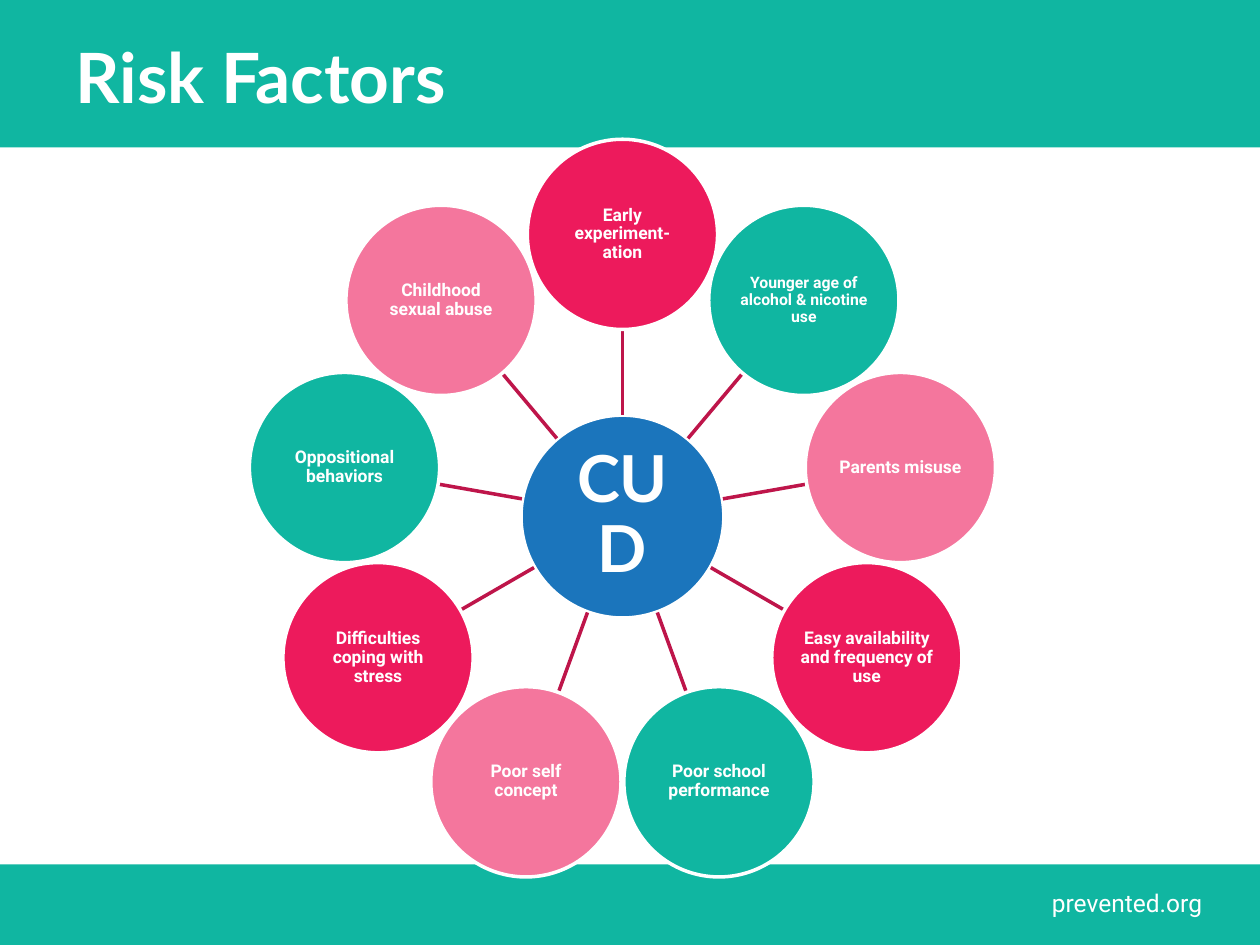
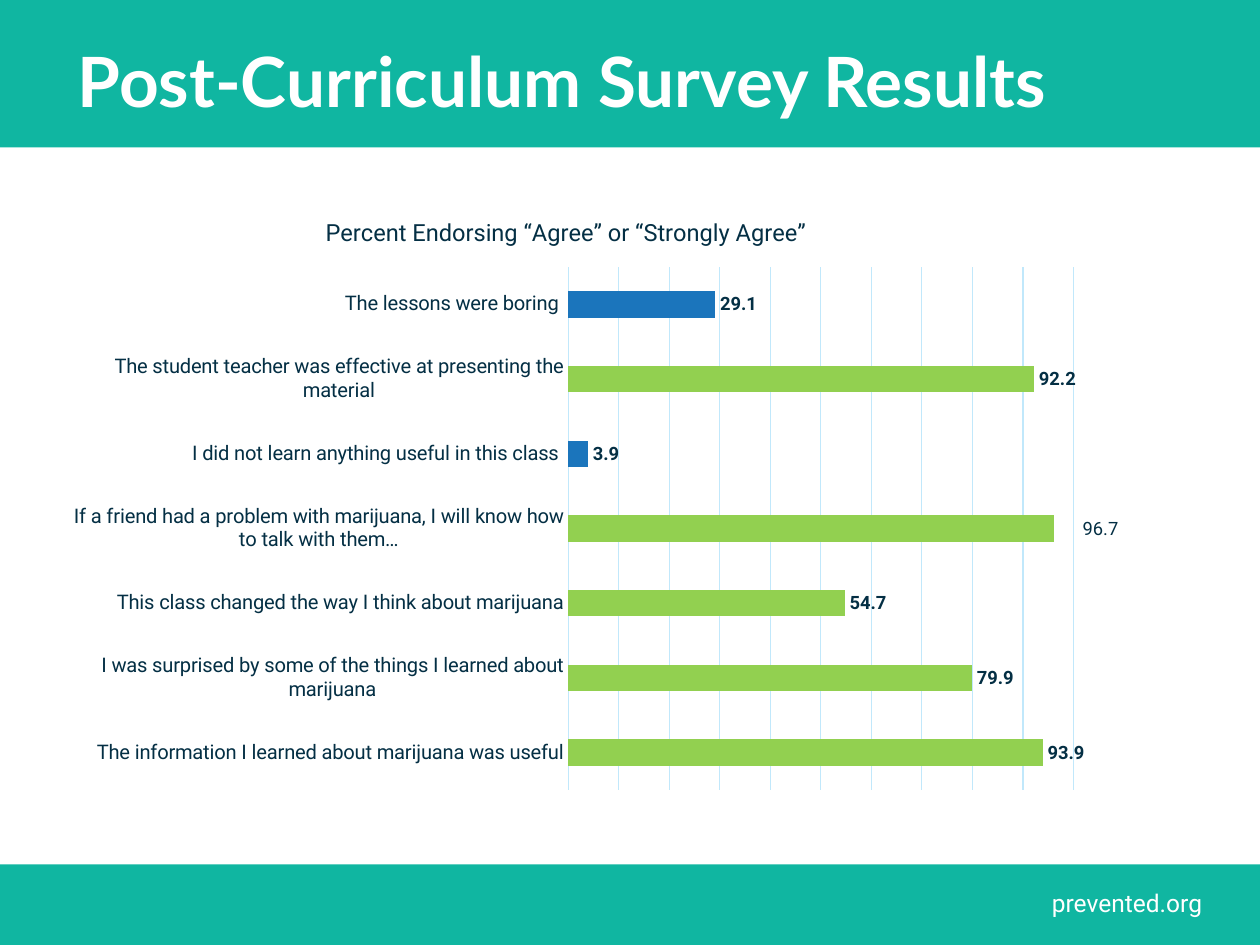
from math import cos, radians, sin

from lxml.etree import SubElement
from pptx import Presentation
from pptx.chart.data import CategoryChartData
from pptx.dml.color import RGBColor
from pptx.enum.chart import XL_CHART_TYPE as ChartType
from pptx.enum.chart import XL_LABEL_POSITION as LabelPos
from pptx.enum.chart import XL_TICK_LABEL_POSITION as TickLabelPos
from pptx.enum.chart import XL_TICK_MARK as TickMark
from pptx.enum.shapes import MSO_CONNECTOR as Connector
from pptx.enum.shapes import MSO_SHAPE as Shape
from pptx.enum.text import MSO_ANCHOR as Anchor
from pptx.enum.text import PP_ALIGN as Align
from pptx.oxml.ns import qn
from pptx.util import Inches, Pt

# Shared look
TEAL = RGBColor(0x10, 0xB6, 0xA1)
RED = RGBColor(0xED, 0x1A, 0x5C)
PINK = RGBColor(0xF4, 0x76, 0x9D)
CRIMSON = RGBColor(0xBE, 0x15, 0x4A)
BLUE = RGBColor(0x1B, 0x75, 0xBC)
GREEN = RGBColor(0x92, 0xD0, 0x50)
NAVY = RGBColor(0x04, 0x2F, 0x44)
PALE_BLUE = RGBColor(0xC1, 0xE8, 0xFB)
WHITE = RGBColor(0xFF, 0xFF, 0xFF)
HEAD_FONT, BODY_FONT = "Lato", "Roboto"

# Wheel of risk factors, clockwise from the top
HUB_X, HUB_Y = 4.94, 4.1
HUB_SIZE, FACTOR_SIZE = 1.61, 1.51
RING, SPOKE_START, SPOKE_END = 2.24, 0.81, 1.48
FACTORS = [
    ("Early experiment-ation", 10),
    ("Younger age of alcohol & nicotine use", 9),
    ("Parents misuse", 10),
    ("Easy availability and frequency of use", 10),
    ("Poor school performance", 10),
    ("Poor self concept", 10),
    ("Difficulties coping with stress", 10),
    ("Oppositional behaviors", 10),
    ("Childhood sexual abuse", 10),
]

# Survey statements, from the bottom bar to the top one
CHART_W, CHART_H = 8.43, 4.88
SURVEY = [
    ("The information I learned about marijuana was useful", 93.9, GREEN),
    ("I was surprised by some of the things I learned about marijuana", 79.9, GREEN),
    ("This class changed the way I think about marijuana", 54.7, GREEN),
    ("If a friend had a problem with marijuana, I will know how to talk with them…",
     96.1, GREEN),
    ("I did not learn anything useful in this class ", 3.9, BLUE),
    ("The student teacher was effective at presenting the material", 92.2, GREEN),
    ("The lessons were boring ", 29.1, BLUE),
]


def set_font(font, size, color, name=BODY_FONT, bold=False):
    font.size, font.name, font.bold = Pt(size), name, bold
    font.color.rgb = color


def write(tf, text, size, color=WHITE, name=BODY_FONT, bold=False,
          align=Align.LEFT, anchor=Anchor.TOP, spacing=None, inset=None):
    tf.word_wrap = True
    tf.vertical_anchor = anchor
    if inset is not None:
        tf.margin_left = tf.margin_right = Inches(inset)
        tf.margin_top = tf.margin_bottom = Inches(inset)
    p = tf.paragraphs[0]
    p.alignment = align
    if spacing:
        p.line_spacing = spacing
    r = p.add_run()
    r.text = text
    set_font(r.font, size, color, name, bold)


def add_text(s, box, text, size, **fmt):
    tb = s.shapes.add_textbox(*map(Inches, box))
    write(tb.text_frame, text, size, **fmt)


def add_band(s, top, height):
    sp = s.shapes.add_shape(Shape.RECTANGLE, 0, Inches(top), Inches(10), Inches(height))
    sp.shadow.inherit = False
    sp.fill.solid()
    sp.fill.fore_color.rgb = TEAL
    sp.line.fill.background()


def add_slide(prs, title, title_box):
    s = prs.slides.add_slide(prs.slide_layouts[6])
    add_band(s, 0, 1.17)
    add_band(s, 6.86, 0.67)
    add_text(s, (7.31, 7, 2.33, 0.34), "prevented.org", 14, align=Align.RIGHT)
    add_text(s, title_box, title, 39.6, name=HEAD_FONT, bold=True)
    return s


def add_circle(s, x, y, diameter, color, text, size, **fmt):
    sp = s.shapes.add_shape(Shape.OVAL, Inches(x - diameter / 2), Inches(y - diameter / 2),
                            Inches(diameter), Inches(diameter))
    sp.shadow.inherit = False
    sp.fill.solid()
    sp.fill.fore_color.rgb = color
    sp.line.color.rgb = WHITE
    sp.line.width = Pt(2)
    write(sp.text_frame, text, size, bold=True, align=Align.CENTER,
          anchor=Anchor.MIDDLE, spacing=0.9, **fmt)


def on_wheel(angle, radius):
    """Point at a clockwise angle from the top of the wheel."""
    a = radians(angle)
    return HUB_X + radius * sin(a), HUB_Y - radius * cos(a)


def add_spoke(s, angle):
    ends = on_wheel(angle, SPOKE_START) + on_wheel(angle, SPOKE_END)
    cn = s.shapes.add_connector(Connector.STRAIGHT, *map(Inches, ends))
    cn.line.color.rgb = CRIMSON
    cn.line.width = Pt(2)
    SubElement(cn.element.spPr, qn("a:effectLst"))


def set_layout(parent, index, modes, **inches):
    """Place a chart part by hand; lengths become fractions of the chart."""
    for old in parent.findall(qn("c:layout")):
        parent.remove(old)
    layout = SubElement(parent, qn("c:layout"))
    parent.insert(index, layout)
    manual = SubElement(layout, qn("c:manualLayout"))
    for tag, mode in modes.items():
        SubElement(manual, qn("c:" + tag)).set("val", mode)
    for tag, length in inches.items():
        whole = CHART_W if tag in "xw" else CHART_H
        SubElement(manual, qn("c:" + tag)).set("val", str(length / whole))


def add_survey_chart(s):
    data = CategoryChartData(number_format="0.0")
    data.categories = [statement for statement, _, _ in SURVEY]
    data.add_series("Series 1", [value for _, value, _ in SURVEY])
    box = map(Inches, (0.48, 1.5, CHART_W, CHART_H))
    chart = s.shapes.add_chart(ChartType.BAR_CLUSTERED, *box, data).chart
    chart.has_legend = False
    set_font(chart.font, 10, NAVY)

    # Title and plot area
    chart.has_title = True
    write(chart.chart_title.text_frame, "Percent Endorsing “Agree” or “Strongly Agree”",
          13.5, color=NAVY, align=Align.CENTER)
    chart.chart_title.include_in_layout = False
    edges = {"xMode": "edge", "yMode": "edge"}
    set_layout(chart.chart_title.element, 1, edges, x=2.07, y=0.18)
    plot_area = chart.element.find(".//" + qn("c:plotArea"))
    set_layout(plot_area, 0, {"layoutTarget": "inner", **edges},
               x=4.03, y=0.62, w=4.01, h=4.15)

    # Axes
    cat, val = chart.category_axis, chart.value_axis
    cat.major_tick_mark = cat.minor_tick_mark = TickMark.NONE
    cat.tick_label_position = TickLabelPos.NEXT_TO_AXIS
    cat.has_major_gridlines = False
    set_font(cat.tick_labels.font, 11.5, NAVY)
    val.minimum_scale, val.maximum_scale, val.major_unit = 0, 100, 10
    val.major_tick_mark = val.minor_tick_mark = TickMark.NONE
    val.has_major_gridlines = True
    val.visible = False
    for line in (cat.format.line, val.major_gridlines.format.line):
        line.color.rgb = PALE_BLUE
        line.width = Pt(0.75)

    # Bars
    plot = chart.plots[0]
    plot.gap_width = 182
    plot.vary_by_categories = False
    series = plot.series[0]
    series.format.fill.solid()
    series.format.fill.fore_color.rgb = TEAL
    for i, (_, _, color) in enumerate(SURVEY):
        fill = series.points[i].format.fill
        fill.solid()
        fill.fore_color.rgb = color

    # Value labels, one of them worded and moved by hand
    labels = series.data_labels
    labels.show_value = True
    labels.number_format, labels.number_format_is_linked = "0.0", False
    labels.position = LabelPos.OUTSIDE_END
    set_font(labels.font, 10.5, NAVY, bold=True)
    label = series.points[3].data_label
    write(label.text_frame, "96.7", 10.5, color=NAVY)
    label.position = LabelPos.OUTSIDE_END
    set_layout(chart.element.find(".//" + qn("c:dLbl")), 1, {}, x=0.19, y=0)
    for leader in chart.element.iter(qn("c:showLeaderLines")):
        leader.set("val", "0")


def risk_factors(prs):
    s = add_slide(prs, "Risk Factors", (0.5, 0.22, 9, 0.78))
    add_circle(s, HUB_X, HUB_Y, HUB_SIZE, BLUE, "CUD", 37, name=HEAD_FONT, inset=0.03)
    colors = (RED, TEAL, PINK)
    for i, (factor, size) in enumerate(FACTORS):
        angle = i * 360 / len(FACTORS)
        add_spoke(s, angle)
        add_circle(s, *on_wheel(angle, RING), FACTOR_SIZE, colors[i % 3], factor, size,
                   inset=0)


def survey_results(prs):
    s = add_slide(prs, "Post-Curriculum Survey Results", (0.52, 0.25, 9.03, 0.71))
    add_survey_chart(s)


def main():
    prs = Presentation()
    prs.slide_width, prs.slide_height = Inches(10), Inches(7.5)
    risk_factors(prs)
    survey_results(prs)
    prs.save("out.pptx")


if __name__ == "__main__":
    main()
